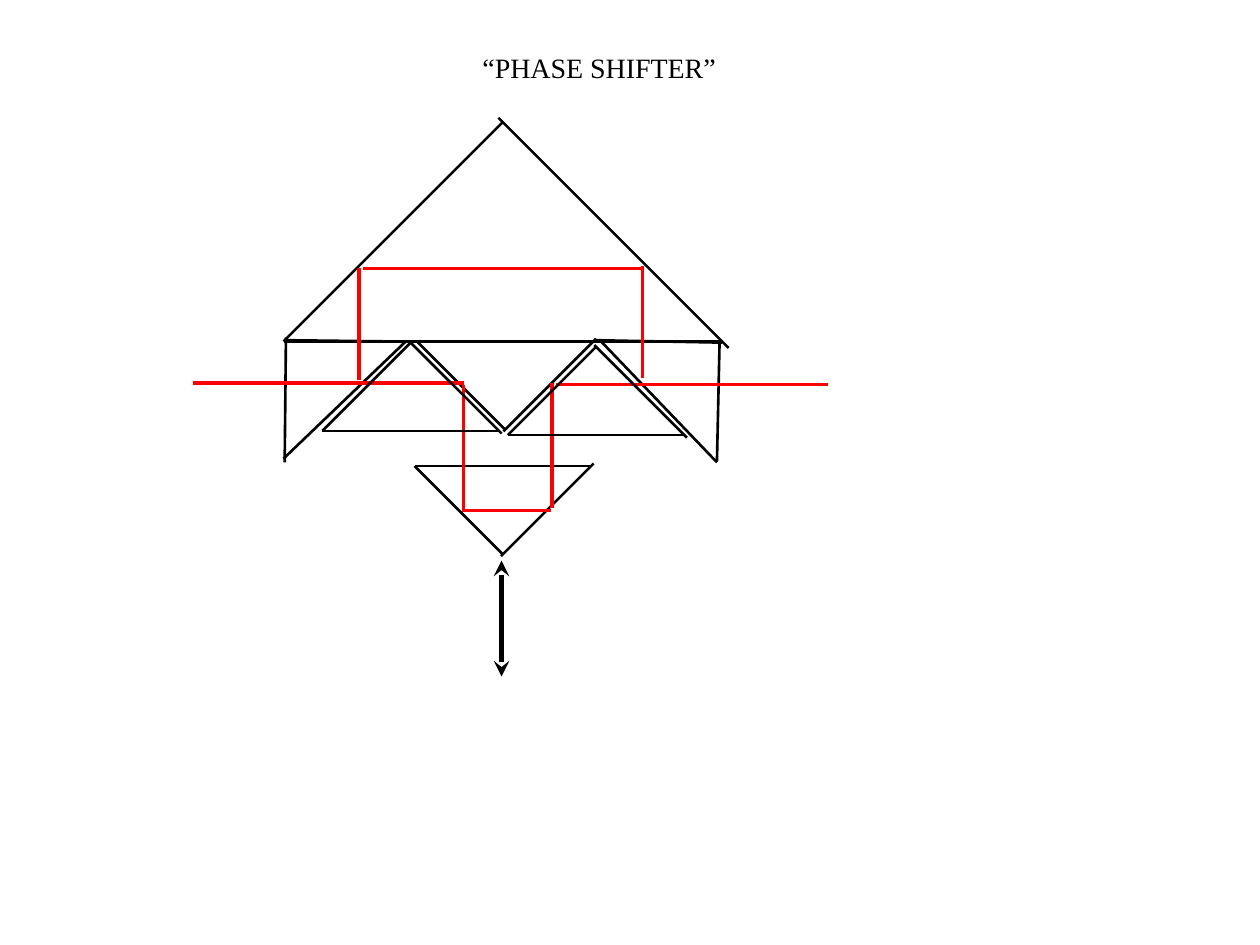
from lxml.etree import SubElement
from pptx import Presentation
from pptx.dml.color import RGBColor
from pptx.enum.shapes import MSO_CONNECTOR
from pptx.enum.text import MSO_AUTO_SIZE
from pptx.oxml.ns import qn
from pptx.util import Pt

COLORS = {"ink": "000000", "beam": "FF0000"}
LEFT_WEDGE = [
    ((69.8, 2.2), (1.4, 1.4)),
    ((1.4, 0), (0.7, 71.3)),
    ((69.8, 2.2), (0, 69.1)),
]
RIGHT_WEDGE = [
    ((69.1, 69.1), (70.6, 0.7)),
    ((72, 1.4), (0, 0)),
    ((69.1, 69.8), (2.2, 0)),
]
BEAM_PATH = [
    ((0, 67), (154.8, 67)),
    ((207.4, 67.7), (362.9, 67.7)),
    ((95, 65.5), (95, 1.4)),
    ((257, 64.1), (257, 0)),
    ((97.2, 1.4), (257, 1.4)),
    ((154.8, 139.7), (154.8, 68.4)),
    ((205.2, 138.2), (205.2, 67)),
    ((154.1, 139.7), (204.5, 139.7)),
]


def add_lines(shapes, left, top, segments, color="ink", width=1.5):
    lines = []
    for (x1, y1), (x2, y2) in segments:
        line = shapes.add_connector(
            MSO_CONNECTOR.STRAIGHT,
            Pt(left + x1), Pt(top + y1), Pt(left + x2), Pt(top + y2),
        )
        line.line.color.rgb = RGBColor.from_string(COLORS[color])
        line.line.width = Pt(width)
        SubElement(line._element.spPr, qn("a:effectLst"))
        lines.append(line)
    return lines


def add_prism(page, left, base, width, direction):
    def point(across, away):
        return across * width, direction * away * width

    edges = [
        (point(0, 0), point(0.5, 0.5)),
        (point(0.49, 0.51), point(1.015, -0.015)),
        (point(0, 0), point(1, 0)),
    ]
    add_lines(page.shapes.add_group_shape().shapes, left, base, edges)


def add_wedge(page, left, top, edges):
    add_lines(page.shapes.add_group_shape().shapes, left, top, edges)


def add_beam(page, left, top):
    add_lines(page.shapes, left, top, BEAM_PATH, "beam", 2)


def add_motion_arrow(page, left, top, height):
    arrow, = add_lines(page.shapes, left, top, [((0, 0), (0, height))], width=3)
    outline = arrow.line._get_or_add_ln()
    for end in ("a:headEnd", "a:tailEnd"):
        SubElement(outline, qn(end), type="stealth")


def add_title(page, left, top, width, height):
    box = page.shapes.add_textbox(Pt(left), Pt(top), Pt(width), Pt(height))
    frame = box.text_frame
    frame.word_wrap = False
    frame.auto_size = MSO_AUTO_SIZE.SHAPE_TO_FIT_TEXT
    para = frame.paragraphs[0]
    para.text = "“PHASE SHIFTER”"
    para.font.name = "Times New Roman"
    para.font.size = Pt(16)
    para.font.color.rgb = RGBColor.from_string(COLORS["ink"])


def main():
    deck = Presentation()
    deck.slide_width, deck.slide_height = Pt(720), Pt(540)
    page = deck.slides.add_slide(deck.slide_layouts[6])
    up, down = -1, 1

    add_title(page, 268.6, 25.2, 149, 26.6)
    add_prism(page, 236.9, 266.4, 100.8, down)
    add_prism(page, 162, 195.1, 250.6, up)
    add_prism(page, 238.3, 195.1, 100.8, down)
    add_wedge(page, 340.6, 194.4, RIGHT_WEDGE)
    add_wedge(page, 162, 193, LEFT_WEDGE)
    add_beam(page, 110.2, 151.9)
    add_motion_arrow(page, 286.6, 320.4, 66.2)
    add_prism(page, 184.3, 246.2, 100.8, up)
    add_prism(page, 290.2, 248.6, 100.8, up)

    deck.save("out.pptx")


if __name__ == "__main__":
    main()
